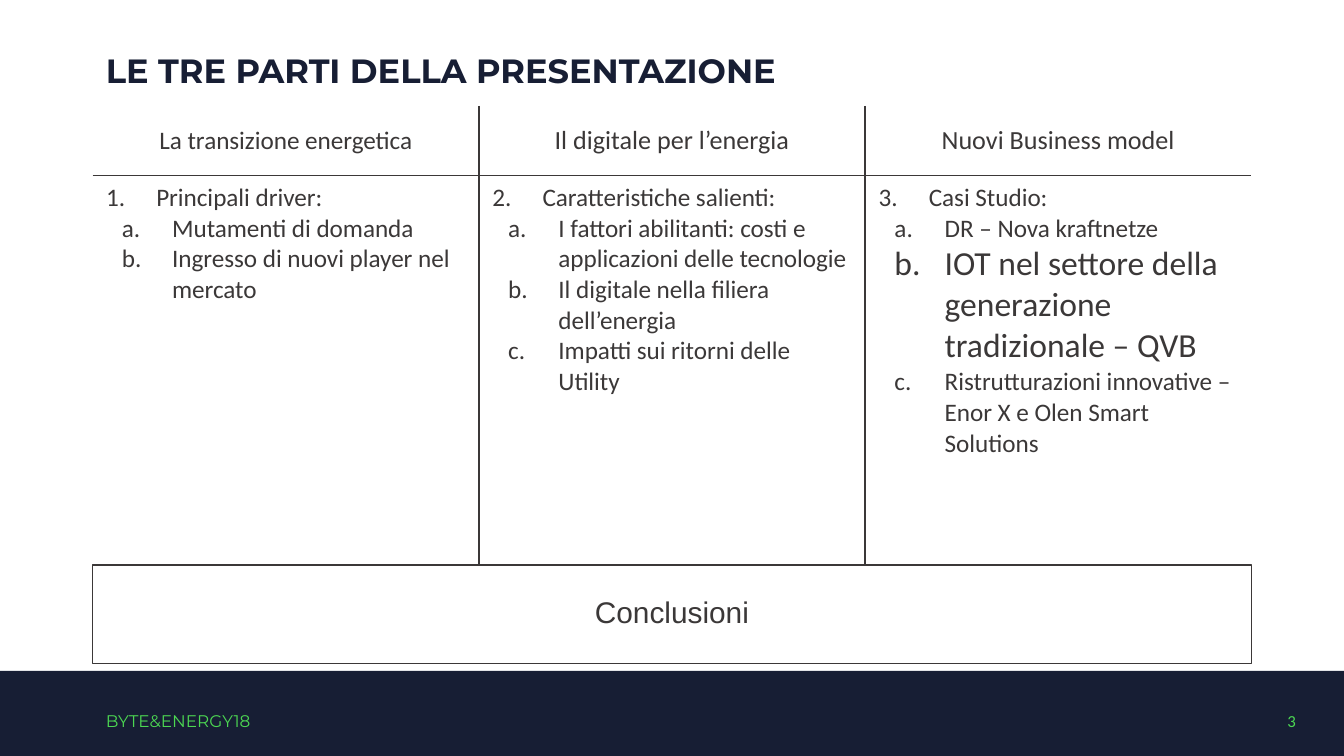
from lxml.etree import SubElement
from pptx import Presentation
from pptx.dml.color import RGBColor
from pptx.enum.shapes import MSO_SHAPE
from pptx.enum.text import MSO_ANCHOR, PP_ALIGN
from pptx.oxml import parse_xml
from pptx.oxml.ns import nsdecls, qn
from pptx.util import Cm, Pt

NAVY, GREEN, GREY = "171E34", "4CD852", "3B3838"
PAGE_WIDTH, PAGE_HEIGHT = 25.4, 14.29
LEFT, WIDTH = 1.75, 21.9
BODY_SIZE = 13.5

# Each column: heading, heading size, numbered point, lettered points with sizes
COLUMNS = [
    ("La transizione energetica", 13.5, "Principali driver:", [
        ("Mutamenti di domanda", BODY_SIZE),
        ("Ingresso di nuovi player nel mercato", BODY_SIZE)]),
    ("Il digitale per l’energia", 14, "Caratteristiche salienti:", [
        ("I fattori abilitanti: costi e applicazioni delle tecnologie", BODY_SIZE),
        ("Il digitale nella filiera dell’energia", BODY_SIZE),
        ("Impatti sui ritorni delle Utility", BODY_SIZE)]),
    ("Nuovi Business model", 14, "Casi Studio:", [
        ("DR – Nova kraftnetze", BODY_SIZE),
        ("IOT nel settore della generazione tradizionale – QVB", 18),
        ("Ristrutturazioni innovative – Enor X e Olen Smart Solutions", BODY_SIZE)]),
]


def colour(code):
    return RGBColor.from_string(code)


def write(para, text, size, font="Calibri", code=GREY, bold=False, **layout):
    span = para.add_run()
    span.text = text
    span.font.color.rgb = colour(code)
    for name, value in {"size": Pt(size), "name": font, "bold": bold}.items():
        setattr(span.font, name, value)
    for name, value in layout.items():
        setattr(para, name, value)


def add_text(page, box, text, size, **style):
    frame = page.shapes.add_textbox(*map(Cm, box)).text_frame
    frame.word_wrap = True
    frame.vertical_anchor = MSO_ANCHOR.MIDDLE
    write(frame.paragraphs[0], text, size, **style)


def add_rectangle(page, box):
    shape = page.shapes.add_shape(MSO_SHAPE.RECTANGLE, *map(Cm, box))
    shape.shadow.inherit = False
    return shape


def number(para, scheme, start, indent):
    props = para._p.get_or_add_pPr()
    props.set("marL", str(Cm(indent)))
    props.set("indent", str(-Cm(0.95)))
    numbering = SubElement(props, qn("a:buAutoNum"), type=scheme)
    if start > 1:
        numbering.set("startAt", str(start))


def set_borders(cell, sides):
    """Draw the listed sides and hide the others."""
    cell.fill.background()
    props = cell._tc.get_or_add_tcPr()
    for place, side in enumerate("LRTB"):
        paint = (f'<a:solidFill><a:srgbClr val="{GREY}"/></a:solidFill>'
                 if side in sides else "<a:noFill/>")
        props.insert(place, parse_xml(
            f'<a:ln{side} {nsdecls("a")} w="{Pt(1)}">{paint}</a:ln{side}>'))


def add_footer(page, box):
    left, top, width, height = box
    band = add_rectangle(page, box)
    band.fill.solid()
    band.fill.fore_color.rgb = colour(NAVY)
    band.line.fill.background()
    text_top = top + 0.56
    add_text(page, (LEFT, text_top, 15.24, 0.76), "BYTE&ENERGY18", 9,
             font="Montserrat", code=GREEN)
    add_text(page, (left + width - 6.38, text_top, 5.72, 0.76), "3", 9,
             code=GREEN, alignment=PP_ALIGN.RIGHT)


def add_conclusion(page, box):
    shape = add_rectangle(page, box)
    shape.fill.background()
    shape.line.color.rgb = colour(GREY)
    shape.line.width = Pt(0.75)
    frame = shape.text_frame
    frame.word_wrap = True
    frame.vertical_anchor = MSO_ANCHOR.MIDDLE
    write(frame.paragraphs[0], "Conclusioni", 16, font="Arial",
          alignment=PP_ALIGN.CENTER, line_spacing=0.9, space_before=Pt(7.5))


def add_parts_table(page, box):
    table = page.shapes.add_table(2, len(COLUMNS), *map(Cm, box)).table
    table.first_row = table.horz_banding = False
    header_height = 1.32
    table.rows[0].height = Cm(header_height)
    table.rows[1].height = Cm(box[3] - header_height)
    last = len(COLUMNS) - 1
    for index, (heading, size, topic, points) in enumerate(COLUMNS):
        table.columns[index].width = Cm(box[2] / len(COLUMNS))
        inner = ("L" if index > 0 else "") + ("R" if index < last else "")
        # Heading
        cell = table.cell(0, index)
        cell.vertical_anchor = MSO_ANCHOR.MIDDLE
        write(cell.text_frame.paragraphs[0], heading, size, alignment=PP_ALIGN.CENTER)
        set_borders(cell, inner + "B")
        # Numbered topic with its lettered points
        cell = table.cell(1, index)
        para = cell.text_frame.paragraphs[0]
        write(para, topic, BODY_SIZE)
        number(para, "arabicPeriod", index + 1, 0.95)
        for text, point_size in points:
            para = cell.text_frame.add_paragraph()
            write(para, text, point_size, level=1)
            number(para, "alphaLcPeriod", 1, 1.25)
        set_borders(cell, inner + "T")


def main():
    deck = Presentation()
    deck.slide_width, deck.slide_height = Cm(PAGE_WIDTH), Cm(PAGE_HEIGHT)
    page = deck.slides.add_slide(deck.slide_layouts[6])
    add_footer(page, (0, 12.68, PAGE_WIDTH, PAGE_HEIGHT - 12.68))
    add_conclusion(page, (LEFT, 10.68, WIDTH, 1.86))
    add_parts_table(page, (LEFT, 2, WIDTH, 8.68))
    add_text(page, (LEFT, 0.77, WIDTH, 1.1), "LE TRE PARTI DELLA PRESENTAZIONE", 18,
             font="Montserrat", code=NAVY, bold=True)
    deck.save("out.pptx")


if __name__ == "__main__":
    main()
